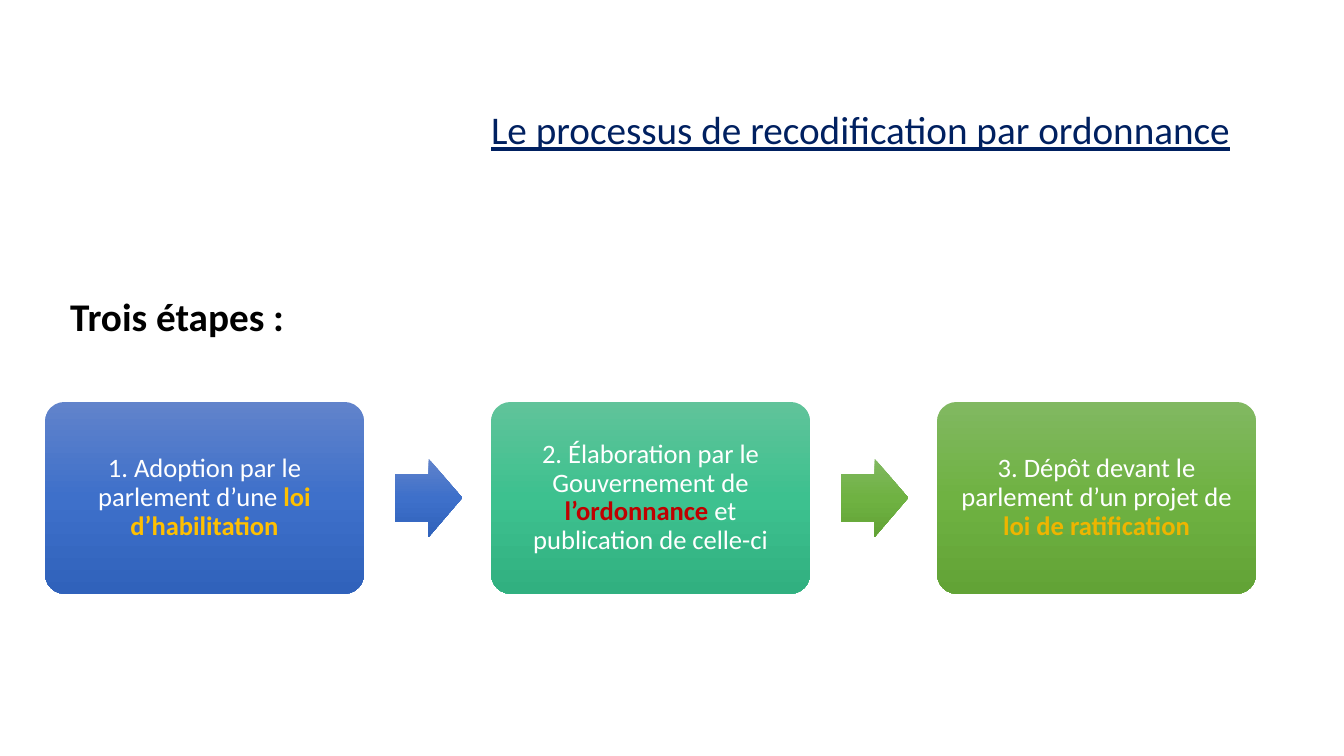
from copy import deepcopy

from pptx import Presentation
from pptx.dml.color import RGBColor
from pptx.enum.shapes import MSO_SHAPE
from pptx.enum.text import MSO_ANCHOR, PP_ALIGN
from pptx.oxml.ns import qn
from pptx.util import Cm, Pt

ROUND, ARROW = MSO_SHAPE.ROUNDED_RECTANGLE, MSO_SHAPE.RIGHT_ARROW
MIDDLE = MSO_ANCHOR.MIDDLE
CENTER, RIGHT, JUSTIFY = PP_ALIGN.CENTER, PP_ALIGN.RIGHT, PP_ALIGN.JUSTIFY

BLUE = ["6183CB", "3E70CA", "3062BB"]
TEAL = ["60C39A", "3DC18F", "31B080"]
GREEN = ["81B861", "6FB242", "62A336"]
WHITE = "FFFFFF"

# Box gradient, text runs (text, colour, bold), gradient of the arrow after it
STEPS = [
    (BLUE, [("1. Adoption par le parlement d’une ", WHITE, False),
            ("loi d’habilitation", "FFC000", True)], BLUE),
    (TEAL, [("2. Élaboration par le Gouvernement de ", WHITE, False),
            ("l’ordonnance", "C00000", True),
            (" et publication de celle-ci", WHITE, False)], GREEN),
    (GREEN, [("3. Dépôt devant le parlement d’un projet de ", WHITE, False),
             ("loi de ratification", "EEB500", True)], None),
]


def color(code):
    return RGBColor.from_string(code)


def style(item, values):
    for name, value in values.items():
        setattr(item, name, value)


def write(para, text, code, **form):
    run = para.add_run()
    run.text = text
    style(run.font, {"name": "Calibri", **form})
    run.font.color.rgb = color(code)


def shade(shape, codes):
    """Fill with three even gradient stops, from top to bottom."""
    shape.fill.gradient()
    shape.fill.gradient_angle = 270
    stops = shape._element.spPr.find(".//" + qn("a:gsLst"))
    stops.insert(1, deepcopy(stops[0]))
    for i, (stop, code) in enumerate(zip(shape.fill.gradient_stops, codes)):
        stop.color.rgb = color(code)
        stop.position = i / 2


def block(slide, kind, box, codes, *adjust):
    shape = slide.shapes.add_shape(kind, *map(Cm, box))
    for i, value in enumerate(adjust):
        shape.adjustments[i] = value
    shape.shadow.inherit = False
    shape.line.fill.background()
    shade(shape, codes)
    return shape


def label(slide, box, text, code, layout, **form):
    frame = slide.shapes.add_textbox(*map(Cm, box)).text_frame
    frame.word_wrap = True
    style(frame.paragraphs[0], layout)
    write(frame.paragraphs[0], text, code, size=Pt(28), **form)


def step(slide, box, codes, runs):
    frame = block(slide, ROUND, box, codes, 0.1).text_frame
    style(frame, {"word_wrap": True, "vertical_anchor": MIDDLE})
    style(frame, {"margin_" + side: Cm(0.2)
                  for side in ("left", "top", "right", "bottom")})
    para = frame.paragraphs[0]
    style(para, {"alignment": CENTER, "line_spacing": 0.9})
    for text, code, bold in runs:
        write(para, text, code, size=Pt(19), bold=bold)


def process(slide, box):
    """Spread the steps evenly over the box, with arrows between them."""
    left, top, width, height = box
    wide, gap, long, tall = 8.03, 0.78, 1.7, 1.98
    pitch = (width - wide) / (len(STEPS) - 1)
    for i, (codes, runs, arrow) in enumerate(STEPS):
        x = left + i * pitch
        step(slide, (x, top, wide, height), codes, runs)
        if arrow:
            spot = (x + wide + gap, top + (height - tall) / 2, long, tall)
            block(slide, ARROW, spot, arrow, 0.6, 0.5)


def main():
    deck = Presentation()
    style(deck, {"slide_width": Cm(33.87), "slide_height": Cm(19.05)})
    slide = deck.slides.add_slide(deck.slide_layouts[6])
    label(slide, (1.52, 7.01, 7.9, 1.78), "Trois étapes :", "000000",
          {"alignment": JUSTIFY, "line_spacing": 1.2}, bold=True)
    label(slide, (5.94, 2.54, 25.3, 1.45),
          "Le processus de recodification par ordonnance", "002060",
          {"alignment": RIGHT}, underline=True)
    process(slide, (1.14, 10.13, 30.51, 4.83))
    deck.save("out.pptx")


if __name__ == "__main__":
    main()
